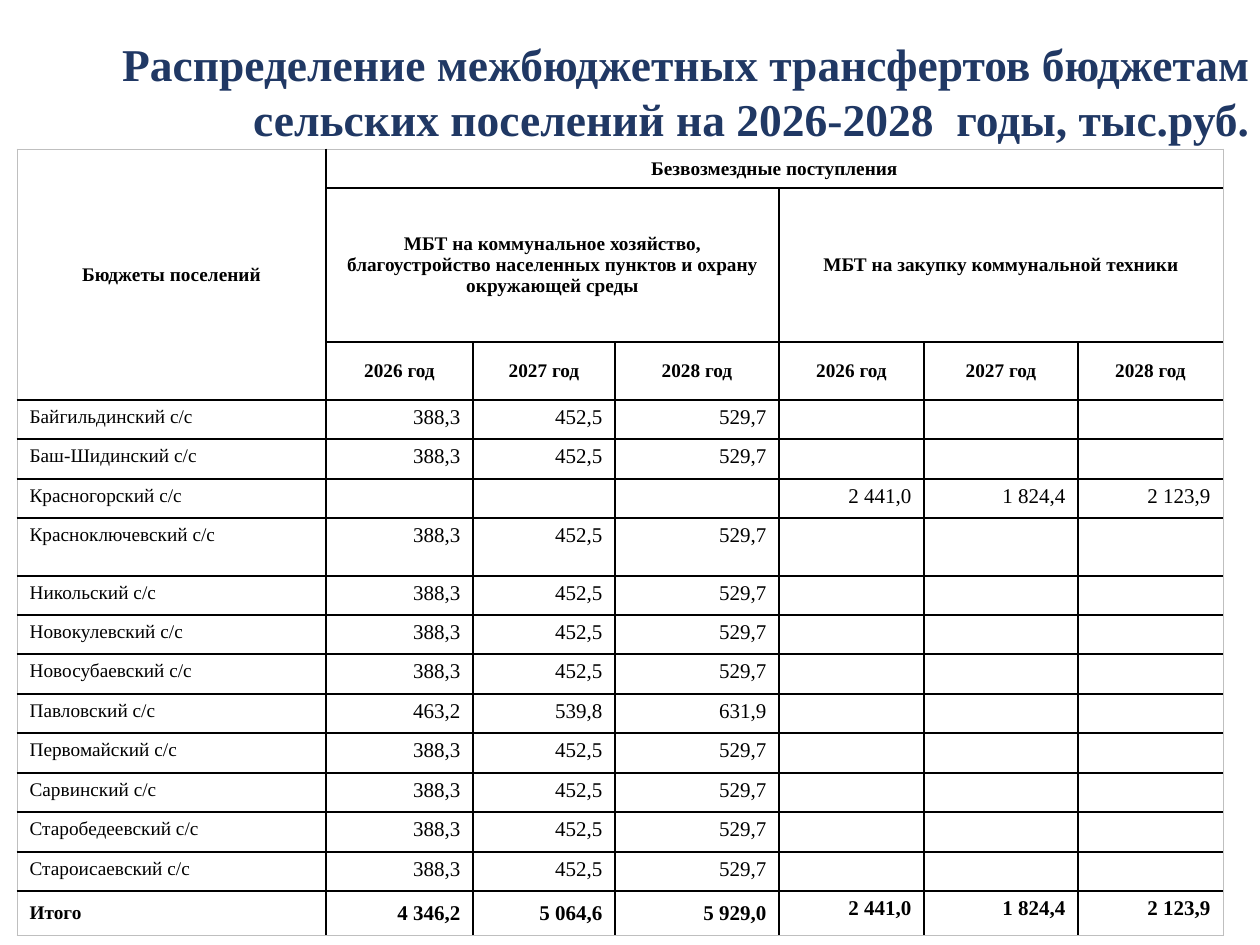
from dataclasses import dataclass
from itertools import pairwise

from lxml.etree import SubElement
from pptx import Presentation
from pptx.dml.color import RGBColor
from pptx.enum.text import MSO_ANCHOR, MSO_AUTO_SIZE, PP_ALIGN
from pptx.oxml.ns import qn
from pptx.util import Emu, Pt

FACE = "Times New Roman"
BLACK, WHITE, GREY, NAVY = "000000", "FFFFFF", "BFBFBF", "203864"
LEFT, MID, RIGHT = PP_ALIGN.LEFT, PP_ALIGN.CENTER, PP_ALIGN.RIGHT
TOP, CENTRE = MSO_ANCHOR.TOP, MSO_ANCHOR.MIDDLE


def px(n: int) -> Emu:
    return Emu(round(n * 914400 / 126))


def color(code: str) -> RGBColor:
    return RGBColor.from_string(code)


@dataclass
class Item:
    row: int
    col: int
    text: str
    size: int = 11
    bold: bool = False
    align: PP_ALIGN = LEFT
    anchor: MSO_ANCHOR = TOP
    rows: int = 1
    cols: int = 1


def write(para, text: str, size: int, bold: bool, align: PP_ALIGN, tint: str) -> None:
    para.alignment = align
    if not text:
        # An empty cell needs its own text size to keep the row low
        SubElement(para._p, qn("a:endParaRPr"), sz=str(size * 100))
        return
    run = para.add_run()
    run.text = text
    for key, val in {"name": FACE, "size": Pt(size), "bold": bold}.items():
        setattr(run.font, key, val)
    run.font.color.rgb = color(tint)


def edge(cell, sides: dict[str, bool]) -> None:
    props = cell._tc.get_or_add_tcPr()
    for spot, (side, outer) in enumerate(sides.items()):
        line = SubElement(props, qn(f"a:{side}"), w=str(Pt(0.5 if outer else 1)))
        fill = SubElement(line, qn("a:solidFill"))
        SubElement(fill, qn("a:srgbClr"), val=GREY if outer else BLACK)
        props.insert(spot, line)


def put(table, item: Item) -> None:
    cell = table.cell(item.row, item.col)
    end_row, end_col = item.row + item.rows, item.col + item.cols
    if item.rows * item.cols > 1:
        cell.merge(table.cell(end_row - 1, end_col - 1))
    cell.vertical_anchor = item.anchor
    cell.fill.solid()
    cell.fill.fore_color.rgb = color(WHITE)
    write(cell.text_frame.paragraphs[0], item.text, item.size, item.bold, item.align, BLACK)
    edge(cell, {
        "lnL": item.col == 0,
        "lnR": end_col == len(table.columns),
        "lnT": item.row == 0,
        "lnB": end_row == len(table.rows),
    })


def head(row: int, col: int, text: str, rows: int = 1, cols: int = 1) -> Item:
    return Item(row, col, text, 11, True, MID, CENTRE, rows, cols)


# Grid lines of the table
XS = [17, 326, 473, 615, 779, 924, 1078, 1223]
YS = [149, 188, 342, 400, 439, 479, 518, 576, 615, 654, 694, 733, 773, 812, 852, 891, 936]

# Data: every village has the usual sums unless listed apart
NAMES = ["Байгильдинский", "Баш-Шидинский", "Красногорский", "Красноключевский",
         "Никольский", "Новокулевский", "Новосубаевский", "Павловский",
         "Первомайский", "Сарвинский", "Старобедеевский", "Староисаевский"]
NONE = [""] * 3
USUAL = ["388,3", "452,5", "529,7"]
TECH = ["2 441,0", "1 824,4", "2 123,9"]
APART = {
    "Красногорский": NONE + TECH,
    "Павловский": ["463,2", "539,8", "631,9"] + NONE,
}
TOTAL = ["4 346,2", "5 064,6", "5 929,0"] + TECH

# Header
items = [
    head(0, 0, "Бюджеты поселений", rows=3),
    head(0, 1, "Безвозмездные поступления", cols=6),
    head(1, 1, "МБТ на коммунальное хозяйство, благоустройство населенных "
               "пунктов и охрану окружающей среды", cols=3),
    head(1, 4, "МБТ на закупку коммунальной техники", cols=3),
]
items += [head(2, col, f"{2026 + (col - 1) % 3} год") for col in range(1, 7)]

# Villages
for row, name in enumerate(NAMES, 3):
    items.append(Item(row, 0, f"{name} с/с"))
    sums = APART.get(name, USUAL + NONE)
    items += [Item(row, col, val, 12, align=RIGHT) for col, val in enumerate(sums, 1)]

# Totals
last = len(YS) - 2
items.append(Item(last, 0, "Итого", bold=True, anchor=CENTRE))
items += [Item(last, col, val, 12, True, RIGHT, CENTRE if col < 4 else TOP)
          for col, val in enumerate(TOTAL, 1)]

deck = Presentation()
deck.slide_width, deck.slide_height = px(1260), px(945)
slide = deck.slides.add_slide(deck.slide_layouts[6])

# Table
table = slide.shapes.add_table(
    len(YS) - 1, len(XS) - 1, px(XS[0]), px(YS[0]),
    px(XS[-1] - XS[0]), px(YS[-1] - YS[0])).table
for key in ("first_row", "horz_banding"):
    setattr(table, key, False)
for col, (a, b) in zip(table.columns, pairwise(XS)):
    col.width = px(b - a)
for row, (a, b) in zip(table.rows, pairwise(YS)):
    row.height = px(b - a)
for item in items:
    put(table, item)

# Title, set just clear of the table
frame = slide.shapes.add_textbox(px(52), px(30), px(1211), px(123)).text_frame
for key, val in {"word_wrap": True, "auto_size": MSO_AUTO_SIZE.SHAPE_TO_FIT_TEXT}.items():
    setattr(frame, key, val)
write(frame.paragraphs[0], "Распределение межбюджетных трансфертов бюджетам сельских "
      "поселений на 2026-2028  годы, тыс.руб.", 26, True, RIGHT, NAVY)

deck.save("out.pptx")
